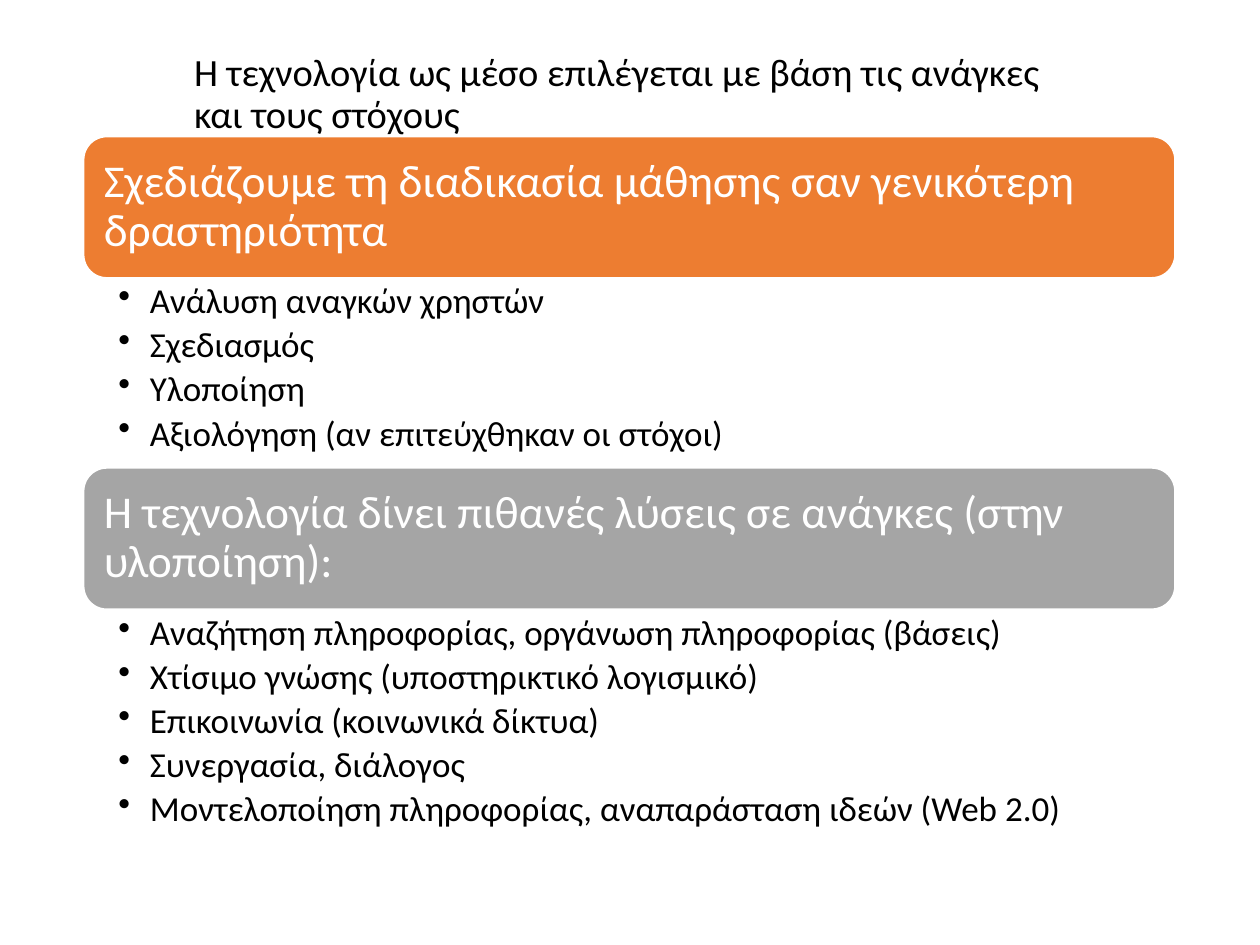
from lxml import etree
from pptx import Presentation
from pptx.dml.color import RGBColor
from pptx.enum.shapes import MSO_SHAPE
from pptx.enum.text import MSO_ANCHOR, MSO_AUTO_SIZE, PP_ALIGN
from pptx.oxml.ns import qn
from pptx.util import Inches, Pt

ROUNDED = MSO_SHAPE.ROUNDED_RECTANGLE
TOP, MIDDLE = MSO_ANCHOR.TOP, MSO_ANCHOR.MIDDLE
LEFT = PP_ALIGN.LEFT
NO_AUTOFIT = MSO_AUTO_SIZE.NONE

BLACK = RGBColor(0x00, 0x00, 0x00)
WHITE = RGBColor(0xFF, 0xFF, 0xFF)
ORANGE = RGBColor(0xED, 0x7D, 0x31)
GRAY = RGBColor(0xA5, 0xA5, 0xA5)

TITLE = "Η τεχνολογία ως μέσο επιλέγεται με βάση τις ανάγκες και τους στόχους"
# Heading, colour, height of the list, list items
SECTIONS = [
    ("Σχεδιάζουμε τη διαδικασία μάθησης σαν γενικότερη δραστηριότητα", ORANGE, 1.5, [
        "Ανάλυση αναγκών χρηστών",
        "Σχεδιασμός",
        "Υλοποίηση",
        "Αξιολόγηση (αν επιτεύχθηκαν οι στόχοι)",
    ]),
    ("Η τεχνολογία δίνει πιθανές λύσεις σε ανάγκες (στην υλοποίηση):", GRAY, 1.88, [
        "Αναζήτηση πληροφορίας, οργάνωση πληροφορίας (βάσεις)",
        "Χτίσιμο γνώσης (υποστηρικτικό λογισμικό)",
        "Επικοινωνία (κοινωνικά δίκτυα)",
        "Συνεργασία, διάλογος",
        "Μοντελοποίηση πληροφορίας, αναπαράσταση ιδεών (Web 2.0)",
    ]),
]
SECTION_LEFT, SECTION_TOP, SECTION_WIDTH = 0.66, 1.08, 8.67
HEADING_HEIGHT = 1.13


class SlideBuilder:
    font_name = "Calibri"
    line_spacing = 0.9

    def __init__(self, slide):
        self.slide = slide

    def style(self, para, size, color):
        para.alignment = LEFT
        para.line_spacing = self.line_spacing
        para.font.name = self.font_name
        para.font.size = Pt(size)
        para.font.color.rgb = color

    def frame(self, shape, anchor, insets):
        """Set wrapping, anchor and the left, top, right and bottom insets."""
        frame = shape.text_frame
        frame.word_wrap = True
        frame.auto_size = NO_AUTOFIT
        frame.vertical_anchor = anchor
        (frame.margin_left, frame.margin_top,
         frame.margin_right, frame.margin_bottom) = map(Inches, insets)
        return frame

    def title(self, text, bounds):
        title = self.slide.shapes.title
        title.left, title.top, title.width, title.height = map(Inches, bounds)
        frame = self.frame(title, MIDDLE, (0.1, 0.05, 0.1, 0.05))
        frame.text = text
        self.style(frame.paragraphs[0], 22, BLACK)

    def heading(self, text, color, bounds):
        bar = self.slide.shapes.add_shape(ROUNDED, *map(Inches, bounds))
        bar.shadow.inherit = False
        bar.fill.solid()
        bar.fill.fore_color.rgb = color
        bar.line.color.rgb = WHITE
        bar.line.width = Pt(1.5)
        frame = self.frame(bar, MIDDLE, (0.11,) * 4)
        frame.text = text
        self.style(frame.paragraphs[0], 26, WHITE)

    def bullet_list(self, items, bounds):
        box = self.slide.shapes.add_textbox(*map(Inches, bounds))
        frame = self.frame(box, TOP, (0.28, 0.04, 0.2, 0.04))
        frame.text = "\n".join(items)
        for para in frame.paragraphs:
            self.style(para, 20, BLACK)
            para.level = 1
            para.space_after = Pt(3.6)
            properties = para._p.get_or_add_pPr()
            properties.set("marL", str(Inches(0.25)))
            properties.set("indent", str(Inches(-0.25)))
            bullet = etree.Element(qn("a:buChar"), char="•")
            properties.find(qn("a:defRPr")).addprevious(bullet)


def main():
    deck = Presentation()
    deck.slide_width, deck.slide_height = Inches(10), Inches(7.5)
    title_only = deck.slide_layouts[5]
    builder = SlideBuilder(deck.slides.add_slide(title_only))

    builder.title(TITLE, (1.44, 0.18, 7.11, 1.15))
    top = SECTION_TOP
    for heading, color, list_height, items in SECTIONS:
        builder.heading(heading, color, (SECTION_LEFT, top, SECTION_WIDTH, HEADING_HEIGHT))
        top += HEADING_HEIGHT
        builder.bullet_list(items, (SECTION_LEFT, top, SECTION_WIDTH, list_height))
        top += list_height

    deck.save("out.pptx")


if __name__ == "__main__":
    main()
